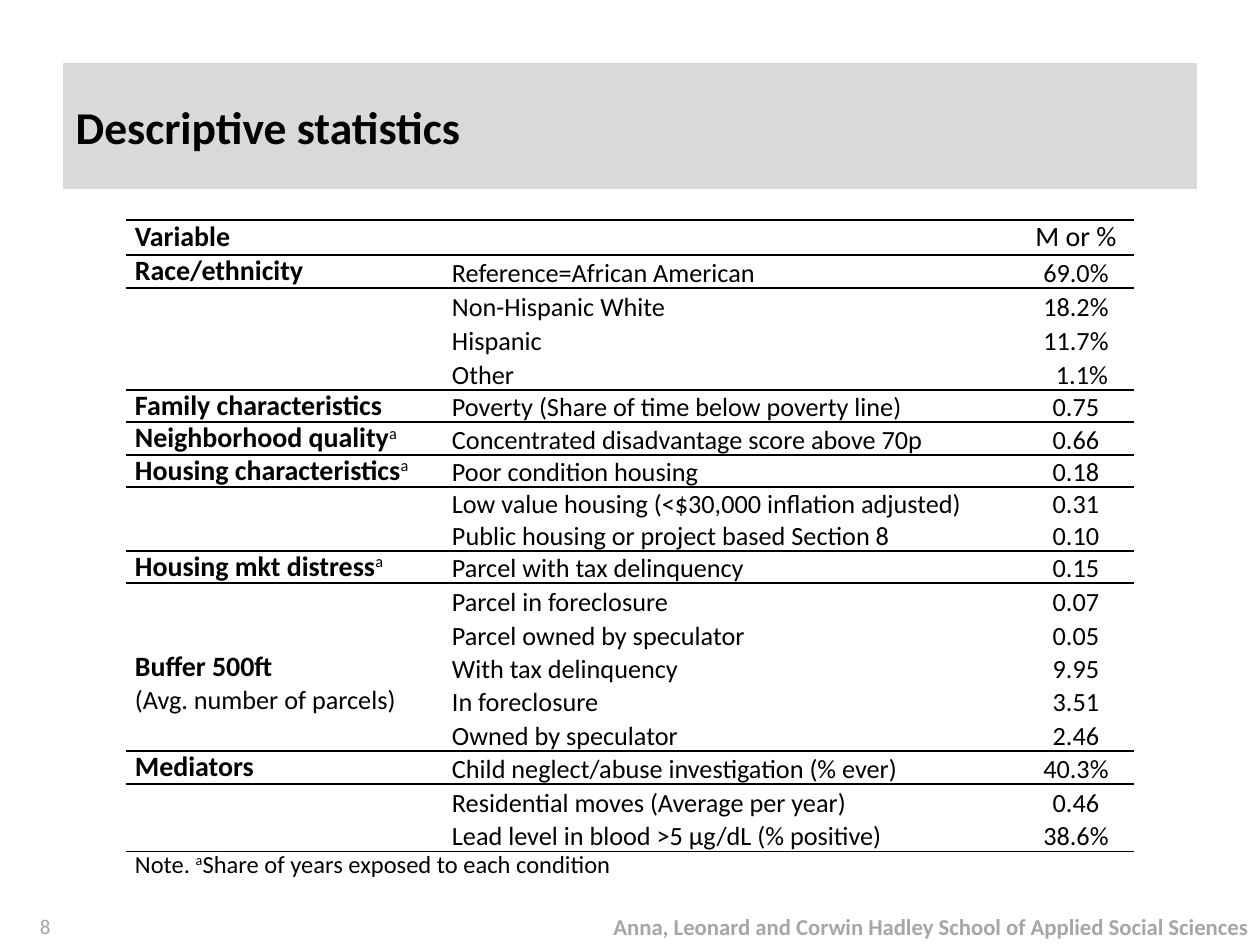
from lxml.etree import SubElement as Sub
from pptx import Presentation
from pptx.dml.color import RGBColor
from pptx.enum.text import MSO_ANCHOR as Anchor, MSO_AUTO_SIZE as Auto, PP_ALIGN as Align
from pptx.oxml import parse_xml
from pptx.oxml.ns import nsdecls, qn
from pptx.util import Pt

PX = 914400 / 126
PLAIN = "{2D5ABB26-0587-4C30-8999-92F81FD0307C}"  # table style: no style, no grid


def px(*sizes):
    return [round(n * PX) for n in sizes]


def write(para, text, size, color="000000", bold=False):
    """Add text to a paragraph; the part after each ^ starts with one superscript letter."""
    head, *rest = text.split("^")
    parts = [(head, False)]
    for part in rest:
        parts += [(part[:1], True), (part[1:], False)]
    for words, raised in parts:
        if not words:
            continue
        run = para.add_run()
        run.text = words
        font = run.font
        font.name, font.size = "Calibri", Pt(size)
        font.bold = bold and not raised
        font.color.rgb = RGBColor.from_string(color)
        if raised:
            font._element.set("baseline", "30000")


prs = Presentation()
prs.slide_width, prs.slide_height = px(1260, 945)
slide = prs.slides.add_slide(prs.slide_layouts[5])

# Title band
title = slide.shapes.title
title.left, title.top, title.width, title.height = px(63, 63, 1134, 126)
title.fill.solid()
title.fill.fore_color.rgb = RGBColor.from_string("D9D9D9")
frame = title.text_frame
frame.auto_size, frame.vertical_anchor = Auto.NONE, Anchor.MIDDLE
frame.paragraphs[0].alignment = Align.LEFT
write(frame.paragraphs[0], "Descriptive statistics", 26, bold=True)

# Table: group, variable, value, row height
rows = [
    ("Variable", "", "M or %", 35),
    ("Race/ethnicity", "Reference=African American", "69.0%", 33),
    ("", "Non-Hispanic White", "18.2%", 34),
    ("", "Hispanic", "11.7%", 34),
    ("", "Other", "1.1%", 34),
    ("Family characteristics", "Poverty (Share of time below poverty line)", "0.75", 32),
    ("Neighborhood quality^a", "Concentrated disadvantage score above 70p", "0.66", 33),
    ("Housing characteristics^a", "Poor condition housing", "0.18", 32),
    ("", "Low value housing (<$30,000 inflation adjusted)", "0.31", 32),
    ("", "Public housing or project based Section 8", "0.10", 32),
    ("Housing mkt distress^a", "Parcel with tax delinquency", "0.15", 32),
    ("", "Parcel in foreclosure", "0.07", 34),
    ("", "Parcel owned by speculator", "0.05", 34),
    ("Buffer 500ft", "With tax delinquency", "9.95", 33),
    ("(Avg. number of parcels)", "In foreclosure", "3.51", 33),
    ("", "Owned by speculator", "2.46", 34),
    ("Mediators", "Child neglect/abuse investigation (% ever)", "40.3%", 33),
    ("", "Residential moves (Average per year)", "0.46", 34),
    ("", "Lead level in blood >5 μg/dL (% positive)", "38.6%", 34),
    ("Note. ^aShare of years exposed to each condition", "", "", 54),
]
ruled = {0, 1, 5, 6, 7, 10, 16, 19}  # rows with a rule above them
last = len(rows) - 1

shape = slide.shapes.add_table(len(rows), 3, *px(126, 220, 1008, 686))
table = shape.table
table.first_row = table.horz_banding = False
table._tbl.tblPr.find(qn("a:tableStyleId")).text = PLAIN
for col, width in zip(table.columns, px(317, 575, 116)):
    col.width = width

for r, (*texts, height) in enumerate(rows):
    table.rows[r].height = px(height)[0]
    for c, text in enumerate(texts):
        cell = table.cell(r, c)
        cell.margin_left, cell.margin_right, cell.margin_top, cell.margin_bottom = px(9, 9, 0, 0)
        cell.vertical_anchor = Anchor.MIDDLE if c == 0 or r == 0 else Anchor.BOTTOM
        para = cell.text_frame.paragraphs[0]
        para.line_spacing = 0.9
        if c == 2:
            para.alignment = Align.CENTER
        if text == "1.1%":
            cell.margin_left = px(21)[0]  # lines up the decimals
        if r == last:
            cell.vertical_anchor = Anchor.TOP
            size, bold = 14, False
        else:
            bold = c == 0 and not text.startswith("(")
            size = 16 if bold or r == 0 else 15
        if text:
            write(para, text, size, bold=bold)
        else:
            Sub(para._p, qn("a:endParaRPr"), sz="1400")
        for side, edge in (("T", r), ("B", r + 1)):
            if edge in ruled:
                cell._tc.get_or_add_tcPr().append(parse_xml(
                    f'<a:ln{side} {nsdecls("a")} w="12700"><a:solidFill>'
                    f'<a:srgbClr val="000000"/></a:solidFill></a:ln{side}>'))
        cell.fill.background()
table.cell(last, 0).merge(table.cell(last, 2))

# Footer
footer = [
    (504, 756, "Anna, Leonard and Corwin Hadley School of Applied Social Sciences", 13, True),
    (0, 63, "8", 12, False),
]
for left, width, text, size, bold in footer:
    frame = slide.shapes.add_textbox(*px(left, 907, width, 38)).text_frame
    frame.word_wrap, frame.vertical_anchor = True, Anchor.MIDDLE
    frame.paragraphs[0].alignment = Align.RIGHT
    write(frame.paragraphs[0], text, size, "A6A6A6", bold)

prs.save("out.pptx")
